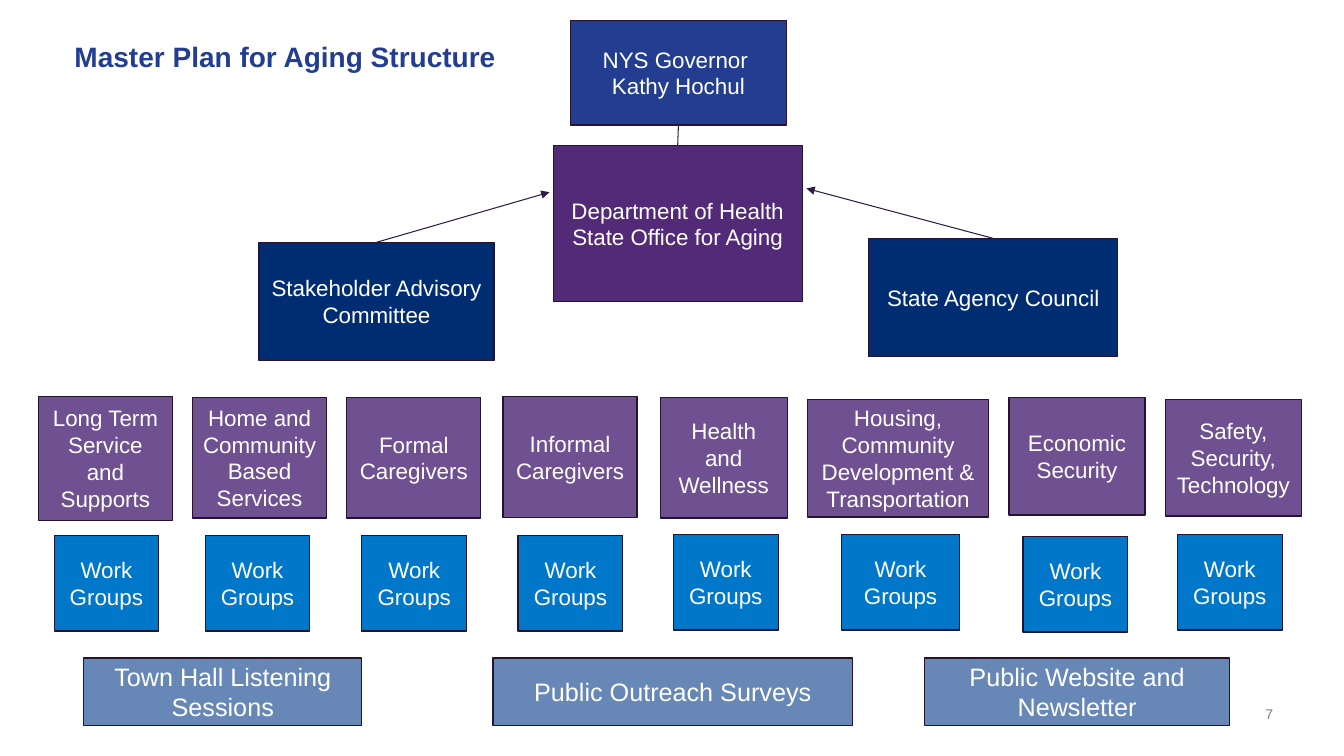
from pptx import Presentation
from pptx.dml.color import RGBColor
from pptx.enum.shapes import MSO_CONNECTOR as Connector, MSO_SHAPE as Shape
from pptx.enum.text import MSO_ANCHOR as Anchor, MSO_AUTO_SIZE as AutoSize, PP_ALIGN as Align
from pptx.oxml.ns import qn
from pptx.util import Pt
from lxml import etree

BLUE = RGBColor(0x23, 0x3E, 0x90)
PURPLE = RGBColor(0x52, 0x2A, 0x78)
NAVY = RGBColor(0x00, 0x2D, 0x72)
LILAC = RGBColor(0x6F, 0x50, 0x91)
AZURE = RGBColor(0x00, 0x77, 0xC8)
STEEL = RGBColor(0x67, 0x87, 0xB7)
OUTLINE = RGBColor(0x23, 0x15, 0x32)
LINK = RGBColor(0x2F, 0x1C, 0x44)
WHITE = RGBColor(0xFF, 0xFF, 0xFF)
GRAY = RGBColor(0x80, 0x80, 0x80)

# Offset from the row's corner, width, height, subcommittee name
SUBCOMMITTEES = [
    (0, 0, 95.8, 88.6, "Long Term Service and Supports"),
    (110.1, 0.7, 95.8, 86.4, "Home and Community Based Services"),
    (220.3, 0.7, 95.8, 86.4, "Formal Caregivers"),
    (331.9, 0, 95.8, 86.4, "Informal Caregivers"),
    (444.2, 0.7, 90.7, 86.4, "Health and Wellness"),
    (549.3, 2.1, 129.6, 84.2, "Housing, Community Development &\nTransportation"),
    (693.3, 0.7, 97.2, 84.2, "Economic Security"),
    (804.9, 2.1, 97.4, 83.5, "Safety, Security, Technology "),
]
# Offset from the row's corner, width
WORK_GROUPS = [
    (0, 0.7, 74.2), (108, 0.7, 74.2), (219.6, 0.7, 74.9), (331.2, 0.7, 74.9),
    (442.1, 0, 74.9), (562.3, 0, 84.2), (691.9, 1.4, 74.9), (802.1, 0, 74.9),
]
# Offset from the row's left, width, name
OUTREACH = [
    (0, 198.7, "Town Hall Listening Sessions"),
    (292.3, 256.9, "Public Outreach Surveys"),
    (600.5, 218.2, "Public Website and Newsletter"),
]


def set_text(shape, text, size, color, align=Align.CENTER, bold=False):
    frame = shape.text_frame
    frame.text = text
    frame.word_wrap = True
    font_format = {"name": "Arial", "size": Pt(size), "bold": bold}
    for paragraph in frame.paragraphs:
        paragraph.alignment = align
        for name, value in font_format.items():
            setattr(paragraph.font, name, value)
        paragraph.font.color.rgb = color


def add_box(slide, left, top, width, height, text, fill, size=16):
    box = slide.shapes.add_shape(Shape.RECTANGLE, Pt(left), Pt(top), Pt(width), Pt(height))
    box.shadow.inherit = False
    box.fill.solid()
    box.fill.fore_color.rgb = fill
    box.line.color.rgb = OUTLINE
    box.line.width = Pt(0.85)
    box.text_frame.vertical_anchor = Anchor.MIDDLE
    set_text(box, text, size, WHITE)
    return box


def add_link(slide, start_box, start_side, end_x, end_y, arrow=False):
    link = slide.shapes.add_connector(Connector.STRAIGHT, 0, 0, Pt(end_x), Pt(end_y))
    link.begin_connect(start_box, start_side)
    link.line.color.rgb = LINK
    link.line.width = Pt(0.75)
    if arrow:
        etree.SubElement(link.line._get_or_add_ln(), qn("a:tailEnd"), type="triangle")
    etree.SubElement(link._element.spPr, qn("a:effectLst"))
    return link


def add_title(slide, left, top, width, height):
    title = slide.shapes.title
    place = {"left": left, "top": top, "width": width, "height": height}
    for name, value in place.items():
        setattr(title, name, Pt(value))
    title.text_frame.auto_size = AutoSize.NONE
    title.text_frame.vertical_anchor = Anchor.MIDDLE
    set_text(title, "Master Plan for Aging Structure", 20, BLUE, bold=True)


def add_leadership(slide, left, top):
    governor = add_box(slide, left + 222.4, top, 154.4, 74.9,
                       "NYS Governor \nKathy Hochul", BLUE)
    department = add_box(slide, left + 210.2, top + 89.5, 177.8, 111.6,
                         "Department of Health\nState Office for Aging", PURPLE)
    committee = add_box(slide, left, top + 158.7, 167.9, 84.2,
                        "Stakeholder Advisory Committee", NAVY)
    council = add_box(slide, left + 435.6, top + 155.9, 177.8, 84.4,
                      "State Agency Council", NAVY)
    # Reporting lines
    add_link(slide, governor, 2, 0, 0).end_connect(department, 0)
    add_link(slide, committee, 0, left + 207.5, top + 122.9, arrow=True)
    add_link(slide, council, 0, left + 391, top + 120.2, arrow=True)


def add_subcommittees(slide, left, top):
    for x, y, width, height, name in SUBCOMMITTEES:
        add_box(slide, left + x, top + y, width, height, name, LILAC)


def add_work_groups(slide, left, top, height):
    for x, y, width in WORK_GROUPS:
        add_box(slide, left + x, top + y, width, height, "Work Groups", AZURE)


def add_outreach(slide, left, top, height):
    for x, width, name in OUTREACH:
        add_box(slide, left + x, top, width, height, name, STEEL, size=18)


def add_page_number(slide, left, top, width, height):
    number = slide.shapes.add_textbox(Pt(left), Pt(top), Pt(width), Pt(height))
    frame = number.text_frame
    for side in ("left", "top", "right", "bottom"):
        setattr(frame, f"margin_{side}", 0)
    frame.vertical_anchor = Anchor.BOTTOM
    set_text(number, "7", 10, GRAY, align=Align.RIGHT)


def main():
    presentation = Presentation()
    presentation.slide_width, presentation.slide_height = Pt(960), Pt(540)
    slide = presentation.slides.add_slide(presentation.slide_layouts[5])
    add_title(slide, 37.4, 24.5, 332.6, 31.7)
    add_leadership(slide, 185, 14.4)
    add_subcommittees(slide, 27.4, 283)
    add_work_groups(slide, 38.9, 381.6, 68.4)
    add_outreach(slide, 59.8, 470, 48.2)
    add_page_number(slide, 879.1, 504, 30.2, 12.2)
    presentation.save("out.pptx")


if __name__ == "__main__":
    main()
